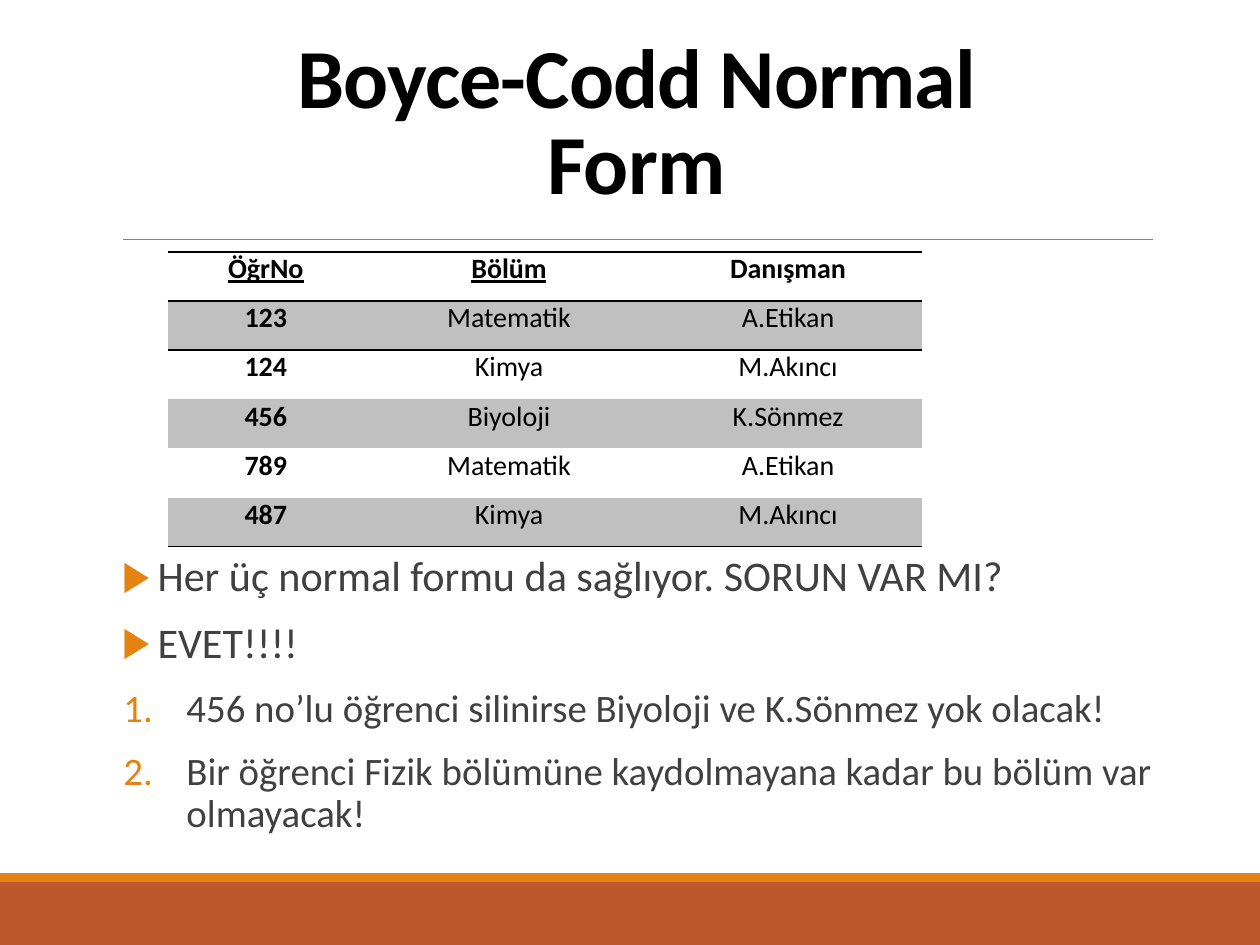
import pptx
import pptx.util
import pptx.dml.color
import pptx.enum.shapes
import pptx.enum.text
import pptx.oxml.ns
import lxml.etree

Inches = pptx.util.Inches
Pt = pptx.util.Pt
RGBColor = pptx.dml.color.RGBColor
qn = pptx.oxml.ns.qn
ALIGN = pptx.enum.text.PP_ALIGN
ANCHOR = pptx.enum.text.MSO_ANCHOR

BLACK = RGBColor(0x00, 0x00, 0x00)
DARK = RGBColor(0x40, 0x40, 0x40)
GRAY = RGBColor(0x80, 0x80, 0x80)
BAND = RGBColor(0xC0, 0xC0, 0xC0)
ORANGE = RGBColor(0xE4, 0x83, 0x12)
RUST = RGBColor(0xBD, 0x58, 0x2C)
NO_STYLE = "{2D5ABB26-0587-4C30-8999-92F81FD0307C}"

ROWS = [
    ("ÖğrNo", "Bölüm", "Danışman"),
    ("123", "Matematik", "A.Etikan"),
    ("124", "Kimya", "M.Akıncı"),
    ("456", "Biyoloji", "K.Sönmez"),
    ("789", "Matematik", "A.Etikan"),
    ("487", "Kimya", "M.Akıncı"),
]
ARROW = {"tag": "a:buChar", "value": {"char": "▶"}, "left": 0.4, "hang": 0.28, "size": 24.1}
NUMBER = {"tag": "a:buAutoNum", "value": {"type": "arabicPeriod"}, "left": 0.63, "hang": 0.5, "size": 22.2}
POINTS = [
    ("Her üç normal formu da sağlıyor. SORUN VAR MI?", ARROW),
    ("EVET!!!!", ARROW),
    ("456 no’lu öğrenci silinirse Biyoloji ve K.Sönmez yok olacak!", NUMBER),
    ("Bir öğrenci Fizik bölümüne kaydolmayana kadar bu bölüm var olmayacak!", NUMBER),
]


def apply(target, **values):
    for name, value in values.items():
        setattr(target, name, value)


def add_child(parent, tag, **values):
    return lxml.etree.SubElement(parent, qn(tag), values)


def set_font(span, size, color, **values):
    apply(span.font, name="Calibri", size=Pt(size), **values)
    span.font.color.rgb = color


def add_bar(page, top, height, color):
    bar = page.shapes.add_shape(pptx.enum.shapes.MSO_SHAPE.RECTANGLE,
                                Inches(0), Inches(top), Inches(10), Inches(height))
    bar.shadow.inherit = False
    bar.fill.solid()
    bar.fill.fore_color.rgb = color
    bar.line.fill.background()


def add_rule(page):
    rule = page.shapes.add_connector(pptx.enum.shapes.MSO_CONNECTOR.STRAIGHT,
                                     Inches(0.98), Inches(1.9), Inches(9.15), Inches(1.9))
    rule.line.color.rgb = GRAY
    rule.line.width = Pt(0.5)
    add_child(rule._element.spPr, "a:effectLst")


def add_title(page, text):
    title = page.shapes.title
    apply(title, left=Inches(1.58), top=Inches(1), width=Inches(6.94), height=Inches(0.73))
    apply(title.text_frame, word_wrap=True, vertical_anchor=ANCHOR.BOTTOM,
          auto_size=pptx.enum.text.MSO_AUTO_SIZE.NONE)
    para = title.text_frame.paragraphs[0]
    apply(para, alignment=ALIGN.CENTER, line_spacing=0.85)
    span = para.add_run()
    span.text = text
    set_font(span, 48, BLACK, bold=True)
    span.font._element.set("spc", "-50")


def add_bullet(para, style):
    properties = para._p.get_or_add_pPr()
    properties.set("marL", str(Inches(style["left"])))
    properties.set("indent", str(-Inches(style["hang"])))
    color = add_child(properties, "a:buClr")
    add_child(color, "a:srgbClr", val=str(ORANGE))
    add_child(properties, "a:buFont", typeface="Calibri")
    add_child(properties, style["tag"], **style["value"])


def add_points(page):
    box = page.shapes.add_textbox(Inches(0.85), Inches(4.36), Inches(8.42), Inches(2.39))
    frame = box.text_frame
    apply(frame, word_wrap=True, margin_left=0, margin_right=0,
          margin_top=Inches(0.05), margin_bottom=Inches(0.05))
    for index, (text, style) in enumerate(POINTS):
        para = frame.add_paragraph() if index else frame.paragraphs[0]
        add_bullet(para, style)
        apply(para, line_spacing=0.9, space_before=Pt(12 if index else 0))
        span = para.add_run()
        span.text = text
        set_font(span, style["size"], DARK)


def add_border(cell, tag):
    line = add_child(cell._tc.get_or_add_tcPr(), tag, w=str(Pt(1)))
    fill = add_child(line, "a:solidFill")
    add_child(fill, "a:srgbClr", val=str(BLACK))


def fill_cell(cell, text, row, column):
    apply(cell, margin_left=Inches(0.07), margin_right=Inches(0.07),
          margin_top=0, margin_bottom=0, vertical_anchor=ANCHOR.TOP)
    if row in (0, 1):
        add_border(cell, "a:lnT")
    if row in (0, len(ROWS) - 1):
        add_border(cell, "a:lnB")
    if row % 2:
        cell.fill.solid()
        cell.fill.fore_color.rgb = BAND
    else:
        cell.fill.background()
    para = cell.text_frame.paragraphs[0]
    para.alignment = ALIGN.CENTER
    span = para.add_run()
    span.text = text
    set_font(span, 16, BLACK, bold=row == 0 or column == 0,
             underline=row == 0 and column < 2)


def add_student_table(page):
    frame = page.shapes.add_table(len(ROWS), 3, Inches(1.33), Inches(2), Inches(6), Inches(2.33))
    table = frame.table
    apply(table, first_row=False, horz_banding=False)
    table._tbl.tblPr.find(qn("a:tableStyleId")).text = NO_STYLE
    for column, width in zip(table.columns, (1.56, 2.3, 2.13)):
        column.width = Inches(width)
    for row, texts in enumerate(ROWS):
        table.rows[row].height = Inches(0.39)
        for column, text in enumerate(texts):
            fill_cell(table.cell(row, column), text, row, column)


def main():
    deck = pptx.Presentation()
    apply(deck, slide_width=Inches(10), slide_height=Inches(7.5))
    page = deck.slides.add_slide(deck.slide_layouts[5])
    add_bar(page, 7, 0.5, RUST)
    add_bar(page, 6.93, 0.07, ORANGE)
    add_rule(page)
    add_title(page, "Boyce-Codd Normal Form")
    add_points(page)
    add_student_table(page)
    deck.save("out.pptx")


if __name__ == "__main__":
    main()
